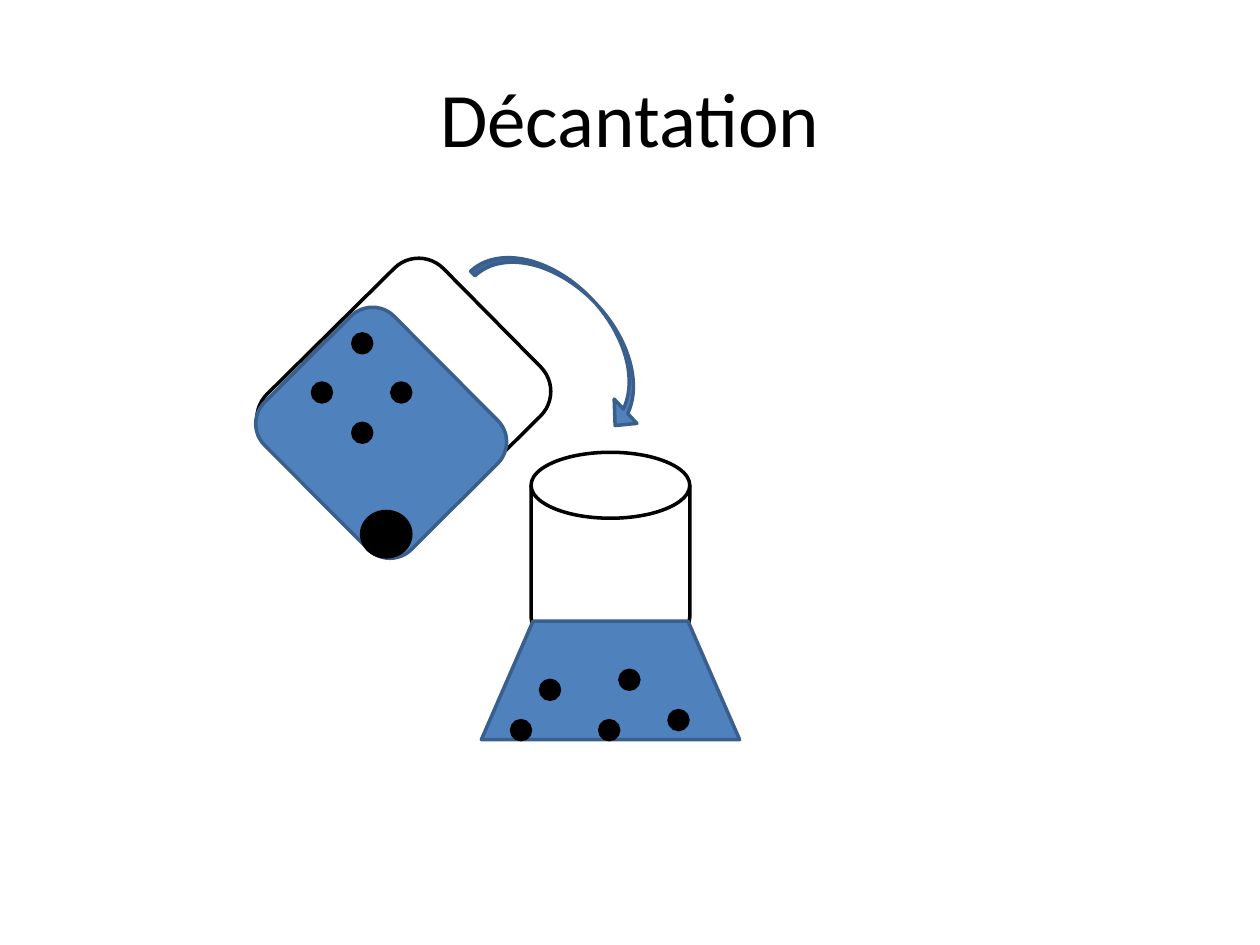
from pptx import Presentation
from pptx.dml.color import RGBColor
from pptx.enum.shapes import MSO_SHAPE
from pptx.enum.text import MSO_ANCHOR, PP_ALIGN
from pptx.util import Inches, Pt

BLACK = RGBColor(0x00, 0x00, 0x00)
WHITE = RGBColor(0xFF, 0xFF, 0xFF)
LIQUID = RGBColor(0x4F, 0x81, 0xBD)
LIQUID_EDGE = RGBColor(0x3A, 0x5F, 0x8C)
PARTICLE_SIZE = 0.15


def add_part(slide, kind, box, fill, line=BLACK, rotation=0):
    """Add an outlined shape; box is left, top, width, height in inches."""
    shape = slide.shapes.add_shape(kind, *(Inches(length) for length in box))
    shape.shadow.inherit = False
    shape.fill.solid()
    shape.fill.fore_color.rgb = fill
    shape.line.color.rgb = line
    shape.line.width = Pt(2)
    shape.rotation = rotation
    return shape


def add_particles(slide, left, top, offsets):
    for across, down in offsets:
        box = (left + across, top + down, PARTICLE_SIZE, PARTICLE_SIZE)
        add_part(slide, MSO_SHAPE.OVAL, box, BLACK)


def add_title(slide, left, top, width, height):
    title = slide.shapes.title
    title.left, title.top = Inches(left), Inches(top)
    title.width, title.height = Inches(width), Inches(height)
    title.text_frame.vertical_anchor = MSO_ANCHOR.MIDDLE
    paragraph = title.text_frame.paragraphs[0]
    paragraph.alignment = PP_ALIGN.CENTER
    run = paragraph.add_run()
    run.text = "Décantation"
    run.font.name = "Calibri"
    run.font.size = Pt(44)
    run.font.color.rgb = BLACK


def add_flask(slide, left, top, width, height):
    # Neck, partly covered by the liquid in the base
    neck_width, base_height = 1.26, 0.94
    neck_left = left + (width - neck_width) / 2
    add_part(slide, MSO_SHAPE.FLOWCHART_MAGNETIC_DISK,
             (neck_left, top, neck_width, 1.57), WHITE)
    # Base filled with liquid
    base_top = top + height - base_height
    add_part(slide, MSO_SHAPE.FLOWCHART_MANUAL_OPERATION,
             (left, base_top, width, base_height), LIQUID, LIQUID_EDGE, 180)
    add_particles(slide, left, base_top,
                  [(0.24, 0.79), (0.47, 0.47), (0.94, 0.79), (1.49, 0.71), (1.1, 0.39)])


def add_tilted_beaker(slide, left, top):
    # Glass and liquid
    add_part(slide, MSO_SHAPE.ROUNDED_RECTANGLE,
             (left + 0.18, top, 1.65, 1.97), WHITE, rotation=45.3)
    add_part(slide, MSO_SHAPE.ROUNDED_RECTANGLE,
             (left, top + 0.48, 1.65, 1.45), LIQUID, LIQUID_EDGE, 45.1)
    # Settled solid and suspended particles
    add_part(slide, MSO_SHAPE.OVAL, (left + 0.67, top + 1.83, 0.39, 0.36), BLACK)
    add_particles(slide, left, top,
                  [(0.6, 0.42), (0.28, 0.81), (0.91, 0.81), (0.6, 1.13)])


def add_pouring_arrow(slide, *box):
    arrow = add_part(slide, MSO_SHAPE.CURVED_DOWN_ARROW, box, LIQUID, LIQUID_EDGE, 46.9)
    for index, value in enumerate((0.09, 0.48, 0.25)):
        arrow.adjustments[index] = value


def main():
    presentation = Presentation()
    presentation.slide_width, presentation.slide_height = Inches(10), Inches(7.5)
    slide = presentation.slides.add_slide(presentation.slide_layouts[5])
    add_title(slide, 0.5, 0.3, 9, 1.25)
    add_flask(slide, 3.82, 3.59, 2.05, 2.28)
    add_tilted_beaker(slide, 2.2, 2.23)
    add_pouring_arrow(slide, 3.65, 2.35, 1.81, 0.55)
    presentation.save("out.pptx")


if __name__ == "__main__":
    main()
